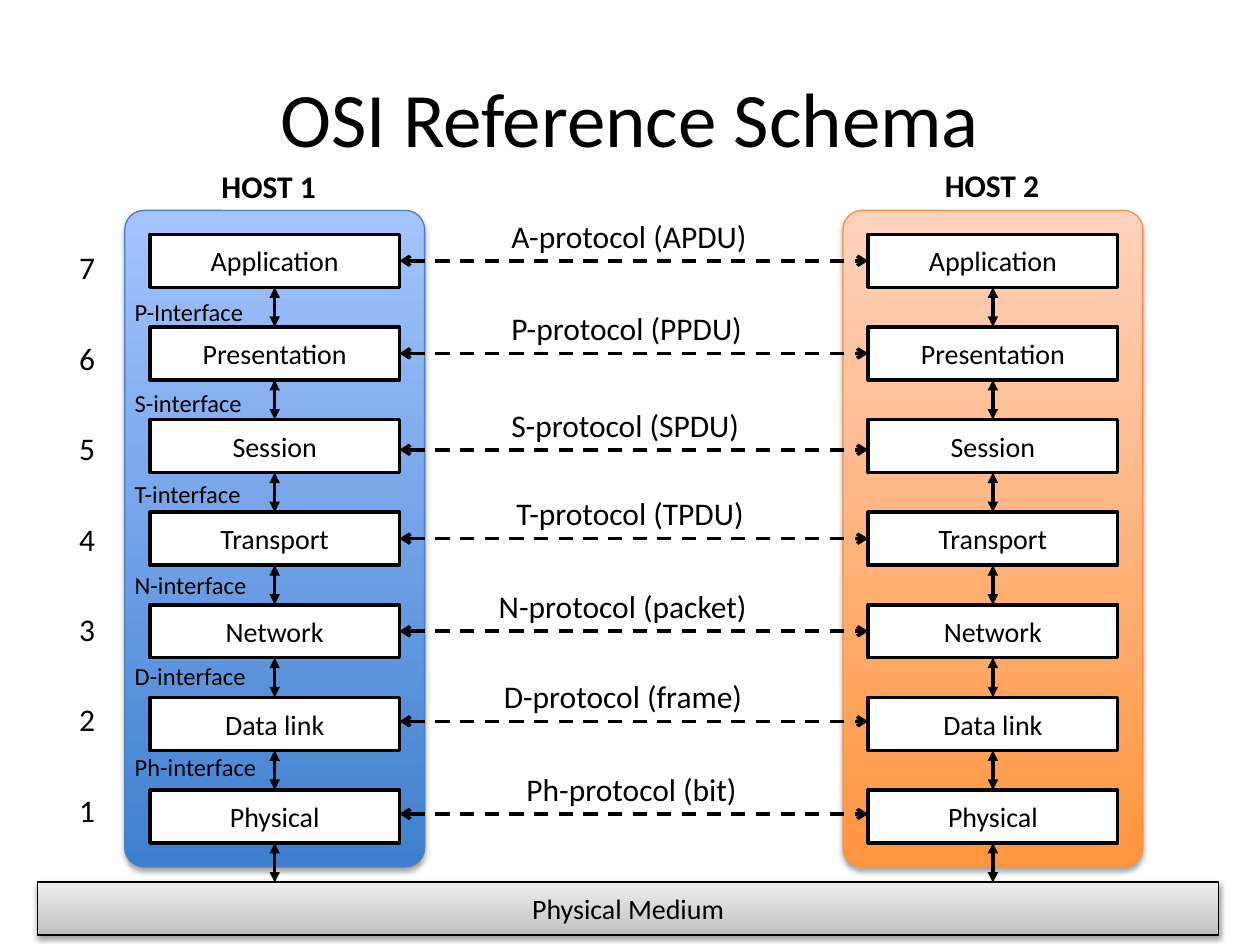
from dataclasses import dataclass
from pptx import Presentation
from pptx.dml.color import RGBColor
from pptx.enum.dml import MSO_LINE_DASH_STYLE as Dash
from pptx.enum.shapes import MSO_CONNECTOR as Conn, MSO_SHAPE as Shape
from pptx.enum.text import MSO_ANCHOR as Anchor, MSO_AUTO_SIZE as Fit, PP_ALIGN as Align
from pptx.oxml import parse_xml
from pptx.oxml.ns import nsdecls
from pptx.util import Inches, Pt


@dataclass(frozen=True)
class Theme:
    font: str = "Calibri"
    ink: str = "000000"
    paper: str = "FFFFFF"
    title: int = 44
    label: int = 18
    card: int = 16
    small: int = 14
    rule: float = 2
    edge: float = 0.75
    blue: tuple = ((0, "3F80CE"), (100, "A4C4FF"))
    blue_edge: str = "4B7EBC"
    orange: tuple = ((0, "FF953E"), (100, "FFD2BD"))
    orange_edge: str = "F69240"
    grey: tuple = ((0, "BDBDBD"), (35, "D1D1D1"), (100, "EEEEEE"))


@dataclass(frozen=True)
class Box:
    """A place on the grid, in columns and rows."""
    x: float
    y: float
    w: float
    h: float

    def at(self, dx, dy, w, h):
        return Box(self.x + dx, self.y + dy, w, h)

    def emu(self):
        return [grid(v) for v in (self.x, self.y, self.w, self.h)]


T = Theme()
COLS, ROWS = 100, 75          # square cells on the 10 by 7.5 inch slide
CELL = 10 / COLS
PITCH, CARD_H = 7.35, 4.2     # layer spacing and card height, in rows
INSET, CARD_TOP, CARD_W = 2, 1.9, 19.8

LAYERS = ["Application", "Presentation", "Session", "Transport",
          "Network", "Data link", "Physical"]
INTERFACES = [f"{s}-interface" for s in ("S", "T", "N", "D", "Ph")]
# Label, its left offset and width in columns, vertical nudge in rows
PROTOCOLS = [("A-protocol (APDU)", 7.9, 21, 0), ("P-protocol (PPDU)", 7.9, 20.7, 0),
             ("S-protocol (SPDU)", 7.9, 20.2, 0.3), ("T-protocol (TPDU)", 8.3, 20.5, 0),
             ("N-protocol (packet)", 6.9, 21.9, 0), ("D-protocol (frame)", 7.3, 21.3, -0.2),
             ("Ph-protocol (bit)", 9.1, 19, -0.2)]


def grid(cells):
    return Inches(cells * CELL)


def rgb(code):
    return RGBColor.from_string(code)


def add_run(p, text, size, bold=False):
    r = p.add_run()
    r.text = text
    r.font.name, r.font.size, r.font.bold = T.font, Pt(size), bold
    r.font.color.rgb = rgb(T.ink)


def label(slide, box, lines, size, bold=False, spacing=None, gap=0):
    """Unwrapped text, one paragraph a line."""
    tf = slide.shapes.add_textbox(*box.emu()).text_frame
    tf.word_wrap, tf.auto_size = False, Fit.SHAPE_TO_FIT_TEXT
    for i, text in enumerate(lines):
        p = tf.add_paragraph() if i else tf.paragraphs[0]
        p.line_spacing = spacing
        if i and gap:
            p.space_before = Pt(gap)
        add_run(p, text, size, bold)


def block(parent, box, edge, width, text=None, radius=0):
    sp = parent.shapes.add_shape(Shape.ROUNDED_RECTANGLE, *box.emu())
    sp.adjustments[0] = radius
    sp.shadow.inherit = False
    sp.fill.solid()
    sp.fill.fore_color.rgb = rgb(T.paper)
    sp.line.color.rgb, sp.line.width = rgb(edge), Pt(width)
    if text:
        tf = sp.text_frame
        tf.word_wrap, tf.vertical_anchor = True, Anchor.MIDDLE
        tf.paragraphs[0].alignment = Align.CENTER
        add_run(tf.paragraphs[0], text, T.card)
    return sp


def shade(sp, stops, alpha, dist):
    """Gradient running upwards, with a soft shadow below."""
    sp.fill.gradient()
    sp.fill.gradient_angle = 90
    xml = "".join(f'<a:gs pos="{pos * 1000}"><a:srgbClr val="{c}"/></a:gs>' for pos, c in stops)
    props = sp.element.spPr
    old = props.find(".//{*}gsLst")
    old.getparent().replace(old, parse_xml(f'<a:gsLst {nsdecls("a")}>{xml}</a:gsLst>'))
    effects = props.find("{*}effectLst")
    effects.append(parse_xml(
        f'<a:outerShdw {nsdecls("a")} blurRad="{Pt(3.1)}" dist="{Pt(dist)}" dir="5400000" '
        f'rotWithShape="0"><a:srgbClr val="{T.ink}"><a:alpha val="{alpha * 1000}"/>'
        f'</a:srgbClr></a:outerShdw>'))


def arrow(parent, x1, y1, x2, y2, head, dash=None):
    """Line with the same arrowhead at both ends."""
    c = parent.shapes.add_connector(Conn.STRAIGHT, *map(grid, (x1, y1, x2, y2)))
    c.line.color.rgb, c.line.width = rgb(T.ink), Pt(T.rule)
    if dash:
        c.line.dash_style = dash
    ln = c.line._get_or_add_ln()
    for end in ("headEnd", "tailEnd"):
        ln.append(parse_xml(f'<a:{end} {nsdecls("a")} type="{head}"/>'))
    c.element.spPr.append(parse_xml(f'<a:effectLst {nsdecls("a")}/>'))


def title(slide, box, text):
    tf = slide.shapes.add_textbox(*box.emu()).text_frame
    tf.word_wrap, tf.vertical_anchor = True, Anchor.MIDDLE
    tf.paragraphs[0].alignment = Align.CENTER
    add_run(tf.paragraphs[0], text, T.title)


def host(slide, box, name, name_dx, name_dy, stops, edge):
    """Panel with the stack of seven layers and its heading."""
    shade(block(slide, box, edge, T.edge, radius=0.064), stops, 35, 1.8)
    stack = slide.shapes.add_group_shape()
    cards = [box.at(INSET, CARD_TOP + i * PITCH, CARD_W, CARD_H) for i in range(len(LAYERS))]
    for card, layer in zip(cards, LAYERS):
        block(stack, card, T.ink, T.rule, layer)
    mid = box.x + box.w / 2
    for card in cards:
        arrow(stack, mid, card.y + CARD_H, mid, card.y + PITCH, "triangle")
    label(slide, box.at(name_dx, name_dy, 9.6, 4), [name], T.label, bold=True)


def protocols(slide, box):
    """Dashed peer links, one for each layer, in the box between the stacks."""
    for i, (text, dx, w, nudge) in enumerate(PROTOCOLS):
        y = box.y + i * PITCH + CARD_H / 2 + nudge
        arrow(slide, box.x, y, box.x + box.w, y, "arrow", Dash.DASH)
        label(slide, Box(box.x + dx, y - 4, w, 4), [text], T.label)


def medium(slide, box):
    shade(block(slide, box, T.ink, T.edge, "Physical Medium"), T.grey, 38, 1.6)


def main():
    prs = Presentation()
    prs.slide_width, prs.slide_height = grid(COLS), grid(ROWS)
    slide = prs.slides.add_slide(prs.slide_layouts[6])
    left, right = Box(9.9, 16.7, 23.8, 52.1), Box(66.9, 16.7, 23.8, 52.1)

    title(slide, Box(5, 3, 90, 12.5), "OSI Reference Schema")
    medium(slide, Box(3, 70, 93.7, 4.2))
    host(slide, left, "HOST 1", 6.7, -3.9, T.blue, T.blue_edge)
    host(slide, right, "HOST 2", 7.1, -4, T.orange, T.orange_edge)
    link_x = left.x + INSET + CARD_W
    protocols(slide, Box(link_x, left.y + CARD_TOP, right.x + INSET - link_x, 48.3))

    # Layer numbers and interface names beside the first stack
    label(slide, Box(5.3, 18.6, 3.3, 48.2), "7654321", T.label, spacing=1.2, gap=25.8)
    label(slide, Box(9.7, 21.8, 11.8, 40.9), ["P-Interface"] + INTERFACES, T.small,
          spacing=Pt(26), gap=26)
    prs.save("out.pptx")


if __name__ == "__main__":
    main()
